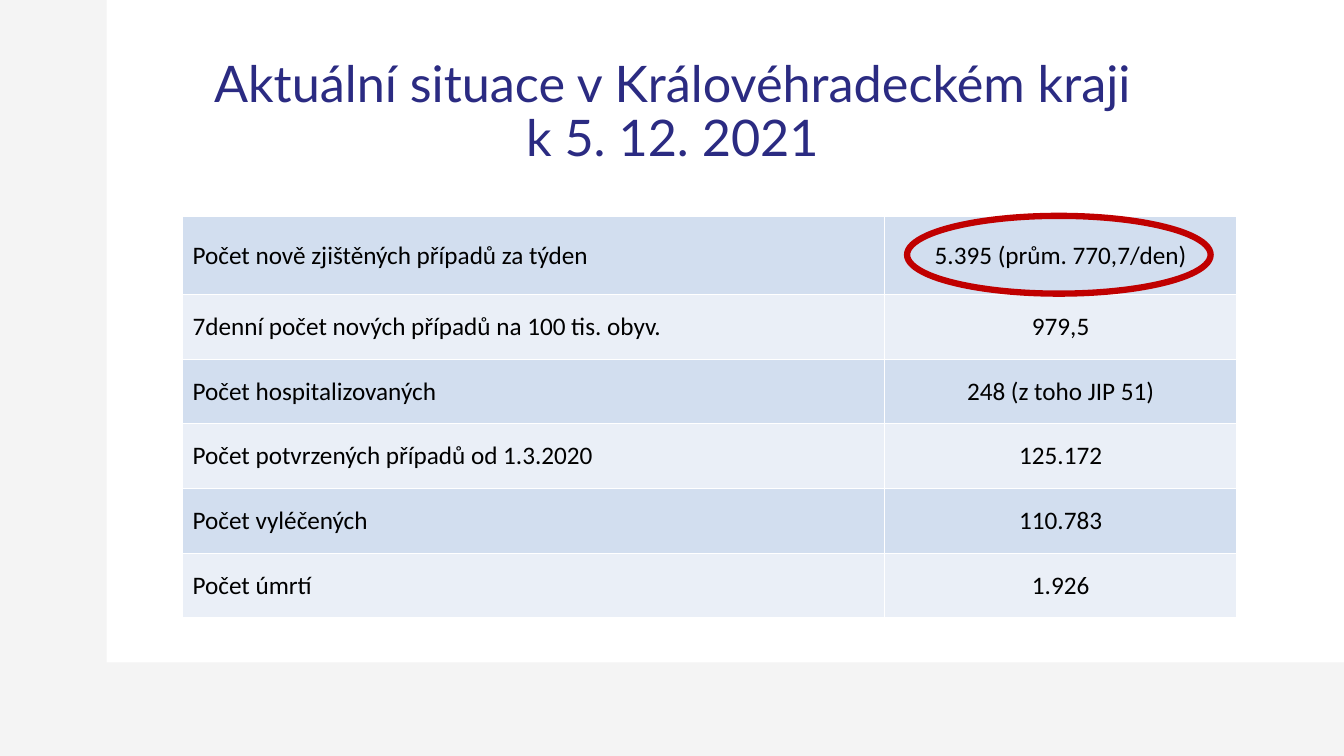
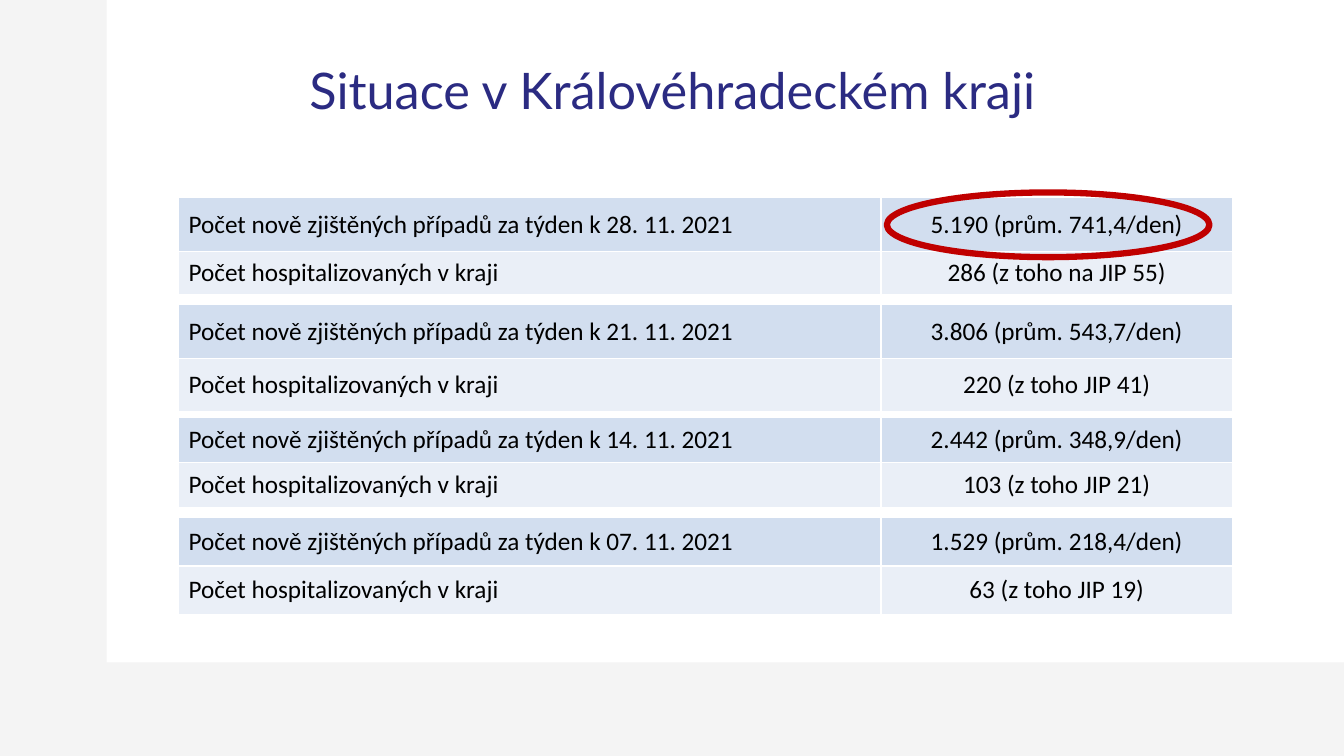
"""Build two slides on the situation in the Hradec Králové region."""
from lxml import etree
from pptx import Presentation
from pptx import util as u
from pptx.dml.color import RGBColor
from pptx.enum import shapes, text
from pptx.oxml.ns import qn

GREY = RGBColor(0xF4, 0xF4, 0xF4)
WHITE = RGBColor(0xFF, 0xFF, 0xFF)
NAVY = RGBColor(0x2B, 0x2B, 0x82)
BLACK = RGBColor(0, 0, 0)
RED = RGBColor(0xC0, 0, 0)
BANDS = RGBColor(0xD2, 0xDE, 0xEF), RGBColor(0xEA, 0xEF, 0xF7)
HEAD = {"name": "Lato", "size": u.Pt(36), "color": NAVY}
BODY = {"name": "Calibri", "size": u.Pt(18), "color": BLACK}
COLS = 17.7, 8.86
ALIGN = text.PP_ALIGN.LEFT, text.PP_ALIGN.CENTER


class Deck:
    """Hold the style and the current slide."""

    def __init__(self):
        self.prs = Presentation()
        self.prs.slide_width, self.prs.slide_height = u.Cm(33.87), u.Cm(19.05)

    def page(self, title, high):
        """Start a slide with its panel and title."""
        self.slide = self.prs.slides.add_slide(self.prs.slide_layouts[6])
        back = self.slide.background.fill
        back.solid()
        back.fore_color.rgb = GREY
        panel = self.shape(shapes.MSO_SHAPE.RECTANGLE, 2.69, 0, 31.18, 16.69)
        panel.fill.solid()
        panel.fill.fore_color.rgb = WHITE
        panel.line.fill.background()
        box = self.slide.shapes.add_textbox(*map(u.Cm, (2.34, 1.02, 29.21, high)))
        frame = box.text_frame
        frame.word_wrap = True
        frame.vertical_anchor = text.MSO_ANCHOR.MIDDLE
        self.label(frame, title, HEAD, text.PP_ALIGN.CENTER)
        frame.paragraphs[0].line_spacing = 0.9

    def shape(self, kind, *area):
        """Add a preset shape without shadow."""
        item = self.slide.shapes.add_shape(kind, *map(u.Cm, area))
        item.shadow.inherit = False
        return item

    def label(self, frame, words, style, align):
        """Put styled words into the first paragraph of a frame."""
        para = frame.paragraphs[0]
        para.text = words
        para.alignment = align
        for key, value in style.items():
            if key == "color":
                para.font.color.rgb = value
            else:
                setattr(para.font, key, value)

    def ring(self, *area):
        """Circle a value in red."""
        ring = self.shape(shapes.MSO_SHAPE.OVAL, *area)
        ring.fill.background()
        ring.line.color.rgb = RED
        ring.line.width = u.Pt(4.5)

    def edge(self, cell):
        """Give a cell thin white borders."""
        props = cell._tc.get_or_add_tcPr()
        for side in ("lnL", "lnR", "lnT", "lnB"):
            line = etree.SubElement(props, qn("a:" + side), w=str(u.Pt(1)))
            fill = etree.SubElement(line, qn("a:solidFill"))
            etree.SubElement(fill, qn("a:srgbClr"), val=str(WHITE))

    def table(self, left, top, highs, rows):
        """Add a banded table of labels and values."""
        area = map(u.Cm, (left, top, sum(COLS), sum(highs)))
        grid = self.slide.shapes.add_table(len(rows), len(COLS), *area).table
        grid.first_row = grid.horz_banding = False
        for col, wide in zip(grid.columns, COLS):
            col.width = u.Cm(wide)
        for r, (high, row) in enumerate(zip(highs, rows)):
            grid.rows[r].height = u.Cm(high)
            for c, words in enumerate(row):
                cell = grid.cell(r, c)
                self.edge(cell)
                cell.fill.solid()
                cell.fill.fore_color.rgb = BANDS[r % 2]
                cell.vertical_anchor = text.MSO_ANCHOR.MIDDLE
                self.label(cell.text_frame, words, BODY, ALIGN[c])


def main():
    """Build and save both slides."""
    deck = Deck()
    deck.page("Aktuální situace v Královéhradeckém kraji\nk 5. 12. 2021", 3.68)
    deck.table(4.6, 5.45, [1.97] + [1.63] * 5, [
        ("Počet nově zjištěných případů za týden", "5.395 (prům. 770,7/den)"),
        ("7denní počet nových případů na 100 tis. obyv.", "979,5"),
        ("Počet hospitalizovaných", "248 (z toho JIP 51)"),
        ("Počet potvrzených případů od 1.3.2020", "125.172"),
        ("Počet vyléčených", "110.783"),
        ("Počet úmrtí", "1.926"),
    ])
    deck.ring(22.86, 5.44, 7.65, 1.96)

    deck.page("Situace v Královéhradeckém kraji", 2.67)
    weeks = [
        (4.98, (1.35, 1.1), "28. 11.", "5.190 (prům. 741,4/den)", "286 (z toho na JIP 55)"),
        (7.68, (1.35, 1.35), "21. 11.", "3.806 (prům. 543,7/den)", "220 (z toho JIP 41)"),
        (10.52, (1.13, 1.13), "14. 11.", "2.442 (prům. 348,9/den)", "103 (z toho JIP 21)"),
        (13.04, (1.22, 1.22), "07. 11.", "1.529 (prům. 218,4/den)", "63 (z toho JIP 19)"),
    ]
    for top, highs, day, cases, beds in weeks:
        deck.table(4.5, top, highs, [
            (f"Počet nově zjištěných případů za týden k {day} 2021", cases),
            ("Počet hospitalizovaných v kraji", beds),
        ])
    deck.ring(22.35, 4.85, 8.13, 1.63)
    deck.prs.save("out.pptx")


if __name__ == "__main__":
    main()
